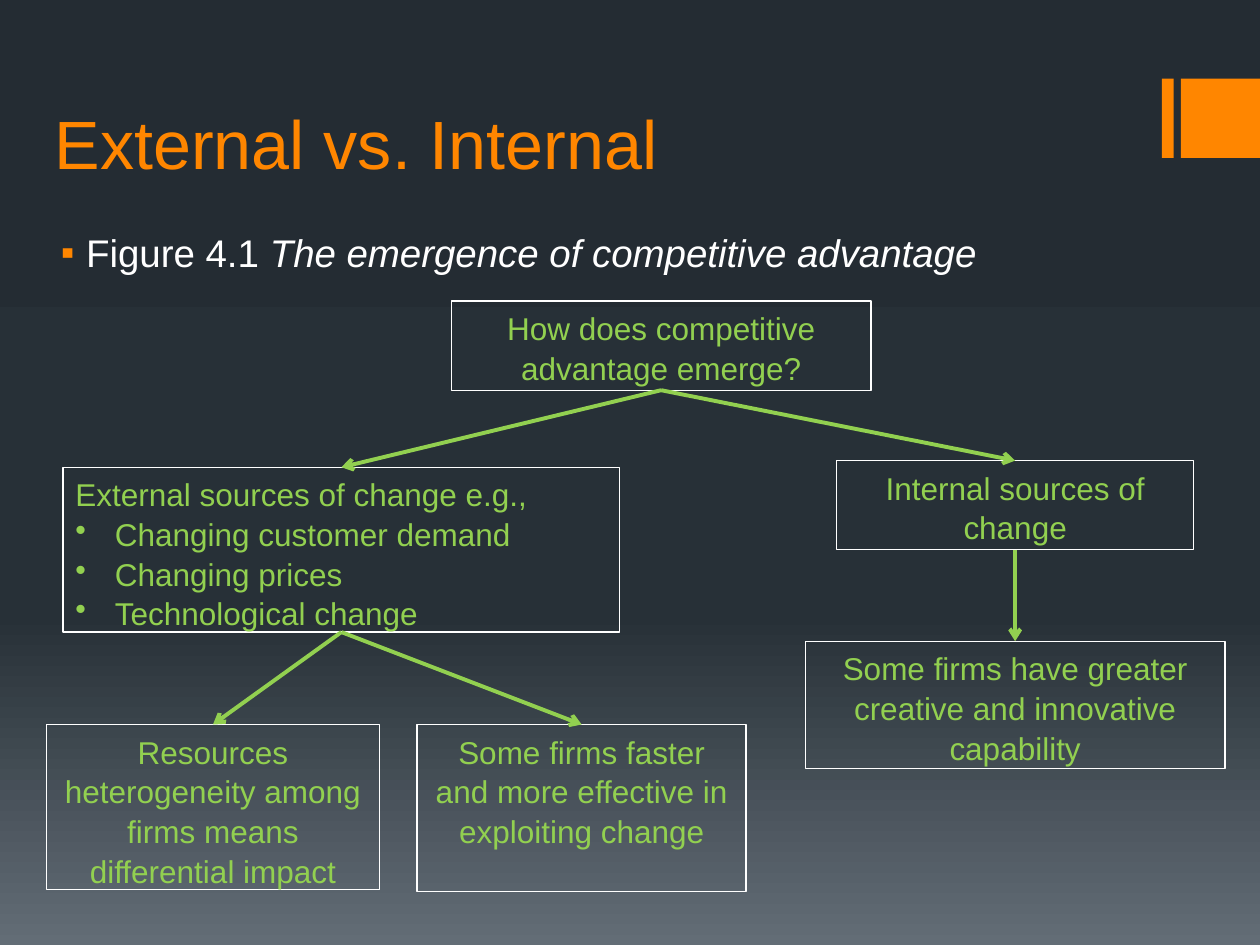
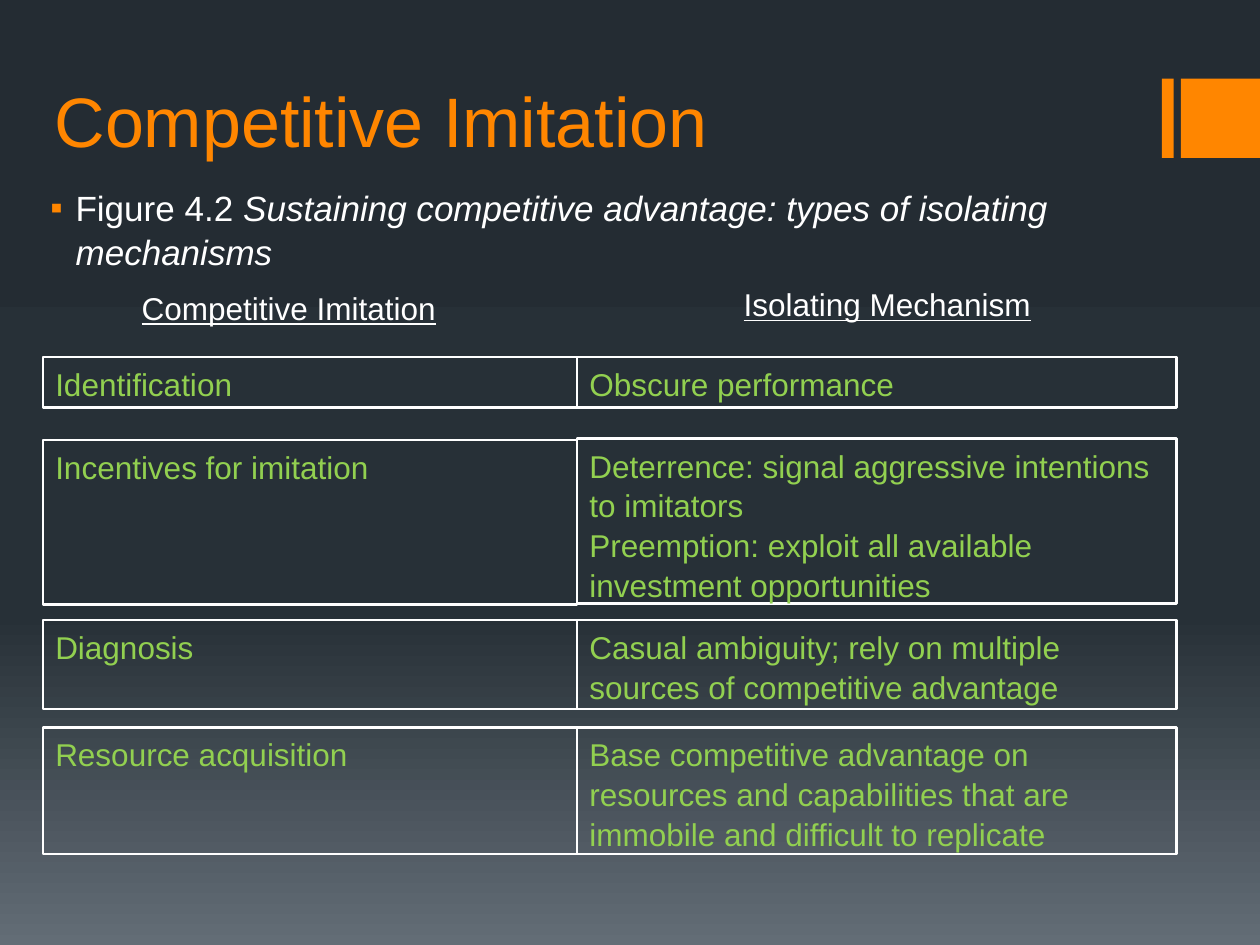
from lxml import etree
from pptx import Presentation
from pptx.dml.color import RGBColor
from pptx.enum.shapes import MSO_CONNECTOR, MSO_SHAPE
from pptx.enum.text import MSO_ANCHOR, MSO_AUTO_SIZE, PP_ALIGN
from pptx.oxml.ns import qn
from pptx.util import Pt

RECT, STRAIGHT = MSO_SHAPE.RECTANGLE, MSO_CONNECTOR.STRAIGHT
TOP, BOTTOM = MSO_ANCHOR.TOP, MSO_ANCHOR.BOTTOM
LEFT, CENTER = PP_ALIGN.LEFT, PP_ALIGN.CENTER
NO_FIT = MSO_AUTO_SIZE.NONE
TOP_SITE, BOTTOM_SITE = 0, 2

COLORS = {"accent": "FF8600", "text": "FFFFFF", "box_text": "92D050",
          "bg_top": "242C33", "bg_mid": "273037", "bg_bottom": "636D76"}
FONT = "Arial"
LINE_SPACING = 1.05
LINE_HEIGHT, PADDING = 21.75, 7.2


def rgb(name):
    return RGBColor.from_string(COLORS[name])


def points(box):
    return [Pt(v) for v in box]


def place(shape, box):
    shape.left, shape.top, shape.width, shape.height = points(box)


def style(p, size, color, align=LEFT, spacing=LINE_SPACING):
    p.alignment, p.line_spacing = align, spacing
    p.font.name, p.font.size = FONT, Pt(size)
    p.font.color.rgb = rgb(color)


def bullet(p, char, left, hang, color):
    """Give a paragraph a hanging bullet."""
    pPr = p._p.get_or_add_pPr()
    pPr.set("marL", str(Pt(left)))
    pPr.set("indent", str(-Pt(hang)))
    bu_clr = etree.Element(qn("a:buClr"))
    etree.SubElement(bu_clr, qn("a:srgbClr"), val=COLORS[color])
    bu_char = etree.Element(qn("a:buChar"), char=char)
    # Bullets come after spacing and before the default run properties
    at = len(pPr.findall(qn("a:lnSpc")) + pPr.findall(qn("a:spcBef")))
    pPr.insert(at, bu_clr)
    pPr.insert(at + 1, bu_char)


# Shared look: gradient background and corner bars on the master
def dress_master(prs, s):
    master = prs.slide_master
    fill = master.background.fill
    fill.gradient()
    fill.gradient_angle = 270
    stops = master.element.find(".//" + qn("p:bg")).find(".//" + qn("a:gsLst"))
    for stop in list(stops):
        stops.remove(stop)
    for pos, name in ((0, "bg_top"), (65, "bg_mid"), (100, "bg_bottom")):
        stop = etree.SubElement(stops, qn("a:gs"), pos=str(pos * 1000))
        etree.SubElement(stop, qn("a:srgbClr"), val=COLORS[name])
    for left, width in ((664, 6.75), (674.75, 45.25)):
        bar = s.shapes.add_shape(RECT, *points((left, 45, width, 45.25)))
        bar.shadow.inherit = False
        bar.fill.solid()
        bar.fill.fore_color.rgb = rgb("accent")
        bar.line.fill.background()
        master.element.cSld.spTree.append(bar.element)


def add_title(s, box, text, size):
    title = s.shapes.title
    place(title, box)
    tf = title.text_frame
    tf.text = text
    tf.auto_size, tf.vertical_anchor = NO_FIT, BOTTOM
    style(tf.paragraphs[0], size, "accent", spacing=1.0)


def add_caption(s, box, number, text, size):
    body = s.placeholders[1]
    place(body, box)
    tf = body.text_frame
    tf.auto_size = NO_FIT
    p = tf.paragraphs[0]
    p.add_run().text = number + " "
    r = p.add_run()
    r.text, r.font.italic = text, True
    style(p, size, "text")
    bullet(p, "▪", 18, 14.4, "accent")


def add_box(s, box, lines, align, line_width):
    """Outlined, unfilled box with one paragraph per line."""
    shape = s.shapes.add_shape(RECT, *points(box))
    shape.shadow.inherit = False
    shape.fill.background()
    shape.line.color.rgb = rgb("text")
    shape.line.width = Pt(line_width)
    tf = shape.text_frame
    tf.word_wrap, tf.vertical_anchor = True, TOP
    tf.text = "\n".join(lines)
    for p in tf.paragraphs:
        style(p, 18, "box_text", align)
    return shape


def add_arrow(s, start, end):
    arrow = s.shapes.add_connector(STRAIGHT, 0, 0, 0, 0)
    arrow.begin_connect(start, BOTTOM_SITE)
    arrow.end_connect(end, TOP_SITE)
    arrow.line.color.rgb = rgb("box_text")
    arrow.line.width = Pt(2.25)
    etree.SubElement(arrow.line._get_or_add_ln(), qn("a:tailEnd"), type="arrow")
    etree.SubElement(arrow.element.spPr, qn("a:effectLst"))


# Tree of sources of competitive advantage
def add_tree(s, origin):
    x, y = origin
    nodes = {
        "question": ((231.2, 0, 240, 51), ["How does competitive advantage emerge?"]),
        "external": ((9.4, 95, 318.2, 94.2),
                     ["External sources of change e.g.,", "Changing customer demand",
                      "Changing prices", "Technological change"]),
        "internal": ((451.5, 91.2, 204, 51), ["Internal sources of change"]),
        "creative": ((433.5, 194.4, 240, 72.6),
                     ["Some firms have greater creative and innovative capability"]),
        "faster": ((211.8, 242, 188, 95.6),
                   ["Some firms faster and more effective in exploiting change"]),
        "resources": ((0, 242, 190.2, 94.2),
                      ["Resources heterogeneity among firms means differential impact"]),
    }
    shapes = {}
    for name, ((left, top, width, height), lines) in nodes.items():
        align = CENTER if len(lines) == 1 else LEFT
        shapes[name] = add_box(s, (x + left, y + top, width, height), lines, align, 0.75)
    for p in shapes["external"].text_frame.paragraphs[1:]:
        bullet(p, "•", 22.5, 22.5, "box_text")
    for start, end in (("question", "external"), ("question", "internal"),
                       ("internal", "creative"), ("external", "resources"),
                       ("external", "faster")):
        add_arrow(s, shapes[start], shapes[end])


def add_heading(s, box, text):
    tf = s.shapes.add_textbox(*points(box)).text_frame
    tf.word_wrap = True
    tf.text = text
    p = tf.paragraphs[0]
    style(p, 18, "text", CENTER)
    p.font.underline = True


# Two columns of paired boxes: form of imitation and isolating mechanism
def add_mechanisms(s, origin):
    x, y = origin
    left_width, right_width = 305.2, 342.8
    add_heading(s, (x + 5.5, y - 43.5, 270, 29), "Competitive Imitation")
    add_heading(s, (x + 347.5, y - 45.5, 270, 29), "Isolating Mechanism")
    rows = [  # top of left box, top of right box, text lines, left, right
        (0, 0, 1, "Identification", ["Obscure performance"]),
        (47.4, 46.7, 4, "Incentives for imitation",
         ["Deterrence: signal aggressive intentions to imitators",
          "Preemption: exploit all available investment opportunities"]),
        (150.4, 150.4, 2, "Diagnosis",
         ["Casual ambiguity; rely on multiple sources of competitive advantage"]),
        (211.6, 211.6, 3, "Resource acquisition",
         ["Base competitive advantage on resources and capabilities that are "
          "immobile and difficult to replicate"]),
    ]
    for left_top, right_top, count, imitation, mechanism in rows:
        height = PADDING + count * LINE_HEIGHT
        add_box(s, (x, y + left_top, left_width, height), [imitation], LEFT, 1.5)
        add_box(s, (x + left_width, y + right_top, right_width, height),
                mechanism, LEFT, 1.5)


def main():
    prs = Presentation()
    prs.slide_width, prs.slide_height = Pt(720), Pt(540)
    layout = prs.slide_layouts[1]

    s = prs.slides.add_slide(layout)
    dress_master(prs, s)
    add_title(s, (24, 18, 630, 90), "External vs. Internal", 39)
    add_caption(s, (24, 126, 630, 36), "Figure 4.1",
                "The emergence of competitive advantage", 22)
    add_tree(s, (26.6, 172))

    s = prs.slides.add_slide(layout)
    add_title(s, (24, 18, 630, 78), "Competitive Imitation", 40)
    add_caption(s, (18, 102, 654, 60), "Figure 4.2",
                "Sustaining competitive advantage: types of isolating mechanisms", 20)
    add_mechanisms(s, (24.5, 204))

    prs.save("out.pptx")


if __name__ == "__main__":
    main()
